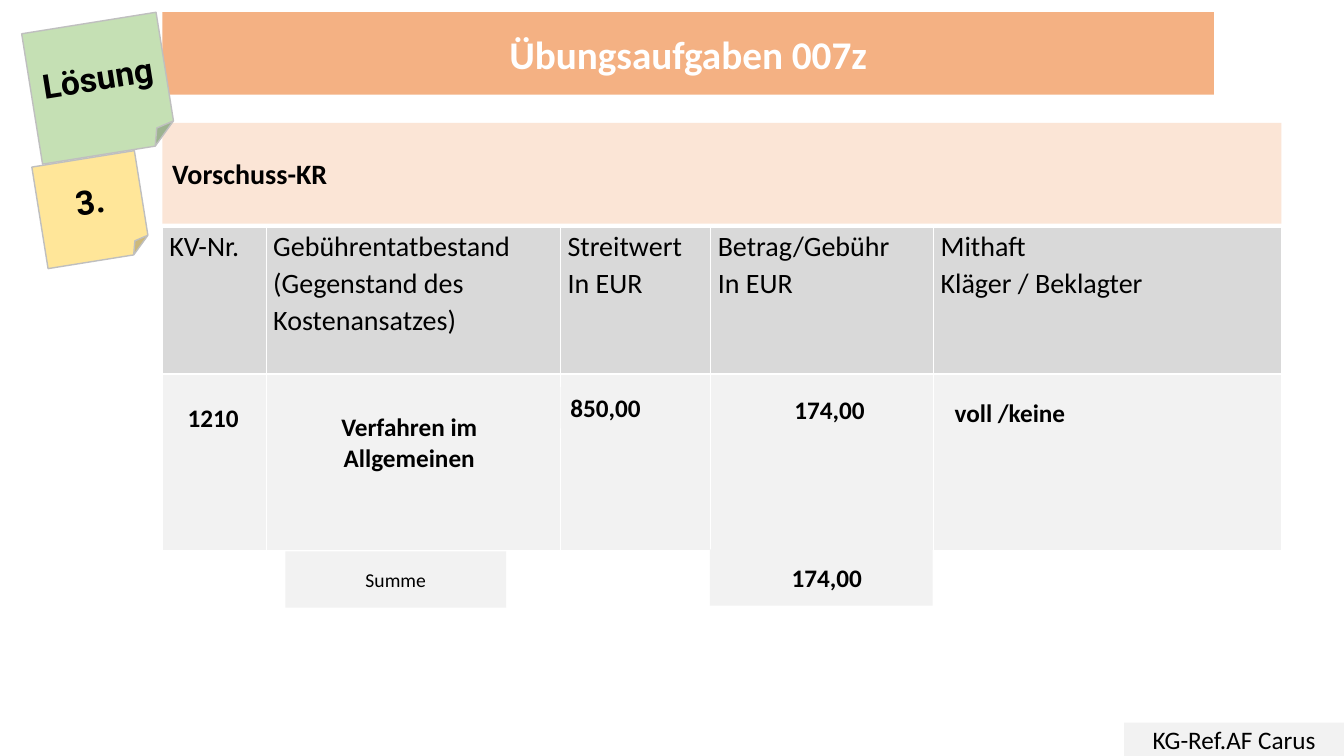
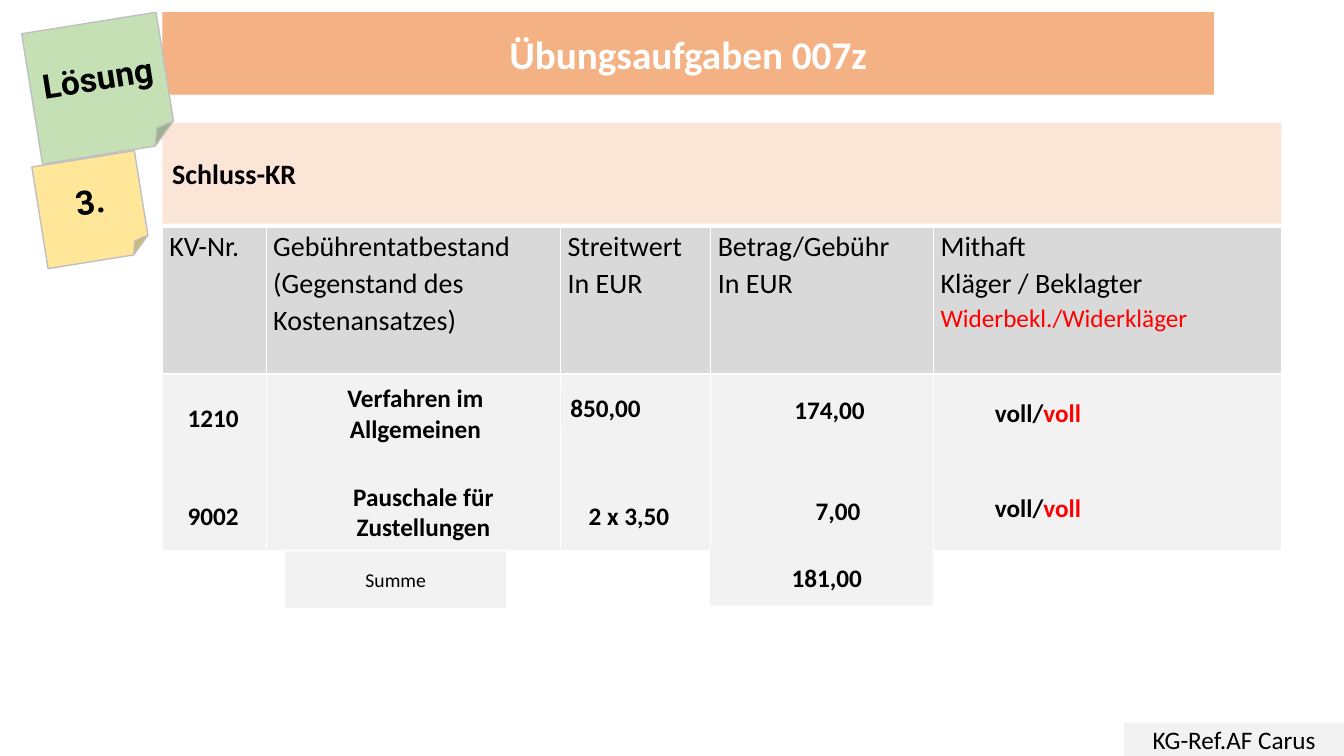
from lxml import etree
from pptx import Presentation
from pptx import util as u
from pptx.dml.color import RGBColor
from pptx.enum import shapes, text
from pptx.oxml.ns import qn

PX = 9144  # EMU per px, 100 px to the inch
COLOURS = {
    "banner": "F4B183", "heading": "FBE5D6", "header": "D9D9D9",
    "body": "F2F2F2", "green": "C5E0B4", "yellow": "FFE699",
    "edge": "BFBFBF", "white": "FFFFFF", "black": "000000", "red": "FF0000",
}
SHAPE = shapes.MSO_SHAPE
LEFT, CENTER = text.PP_ALIGN.LEFT, text.PP_ALIGN.CENTER

TABLE_LEFT, TABLE_TOP = 161, 226
COLUMNS = [103, 292, 149, 221, 345]
ROWS = [145, 175]
HEADERS = [
    ["KV-Nr."],
    ["Gebührentatbestand", "(Gegenstand des Kostenansatzes)"],
    ["Streitwert", "In EUR"],
    ["Betrag/Gebühr", "In EUR"],
    ["Mithaft", "Kläger / Beklagter"],
]


def rgb(name):
    return RGBColor.from_string(COLOURS[name])


def lengths(*pixels):
    return [u.Emu(pixel * PX) for pixel in pixels]


class Deck:
    def __init__(self):
        self.deck = Presentation()
        self.deck.slide_width, self.deck.slide_height = lengths(1333, 750)
        self.page = None

    def new_page(self):
        self.page = self.deck.slides.add_slide(self.deck.slide_layouts[5])

    def add_spans(self, para, spans, size, bold=False, font="Calibri",
                  colour="black", align=LEFT):
        """Fill a paragraph; spans is a string or a list of (text, colour)."""
        para.alignment = align
        if isinstance(spans, str):
            spans = [(spans, colour)]
        for words, span_colour in spans:
            span = para.add_run()
            span.text = words
            span.font.name = font
            span.font.size = u.Pt(size)
            span.font.bold = bold
            span.font.color.rgb = rgb(span_colour)

    def title(self, at, words):
        box = self.page.shapes.title
        box.left, box.top, box.width, box.height = lengths(*at)
        outline = etree.SubElement(box.element.spPr, qn("a:prstGeom"),
                                   prst="roundRect")
        etree.SubElement(outline, qn("a:avLst"))
        box.fill.solid()
        box.fill.fore_color.rgb = rgb("banner")
        frame = box.text_frame
        frame.auto_size = text.MSO_AUTO_SIZE.NONE
        frame.vertical_anchor = text.MSO_ANCHOR.MIDDLE
        self.add_spans(frame.paragraphs[0], words, 28, True, colour="white",
                       align=CENTER)

    def box(self, at, spans, fill="body", kind=SHAPE.RECTANGLE, size=18,
            bold=True, font="Calibri", align=LEFT):
        box = self.page.shapes.add_shape(kind, *lengths(*at))
        box.shadow.inherit = False
        box.fill.solid()
        box.fill.fore_color.rgb = rgb(fill)
        box.line.fill.background()
        box.text_frame.word_wrap = True
        box.text_frame.vertical_anchor = text.MSO_ANCHOR.MIDDLE
        self.add_spans(box.text_frame.paragraphs[0], spans, size, bold, font,
                       align=align)
        return box

    def sticky_note(self, at, words, fill):
        note = self.box(at, words, fill, SHAPE.FOLDED_CORNER, 24,
                        font="Roboto", align=CENTER)
        note.rotation = 350.9
        note.line.color.rgb = rgb("edge")
        note.line.width = u.Pt(1)

    def border(self, cell):
        properties = cell._tc.get_or_add_tcPr()
        for index, side in enumerate(("lnL", "lnR", "lnT", "lnB")):
            line = etree.Element(qn("a:" + side), w=str(u.Pt(1)))
            fill = etree.SubElement(line, qn("a:solidFill"))
            etree.SubElement(fill, qn("a:srgbClr"), val=COLOURS["white"])
            properties.insert(index, line)

    def table(self, headers):
        """Draw a header row above one empty body row."""
        at = TABLE_LEFT, TABLE_TOP, sum(COLUMNS), sum(ROWS)
        table = self.page.shapes.add_table(
            len(ROWS), len(COLUMNS), *lengths(*at)).table
        for row, height in zip(table.rows, lengths(*ROWS)):
            row.height = height
        for column, width in zip(table.columns, lengths(*COLUMNS)):
            column.width = width
        for cell in table.iter_cells():
            cell.fill.solid()
            cell.fill.fore_color.rgb = rgb("body")
            self.border(cell)
        for index, lines in enumerate(headers):
            cell = table.cell(0, index)
            cell.fill.fore_color.rgb = rgb("header")
            (cell.margin_left, cell.margin_right, cell.margin_top,
             cell.margin_bottom) = lengths(7, 7, 0, 0)
            for number, line in enumerate(lines):
                frame = cell.text_frame
                para = frame.add_paragraph() if number else frame.paragraphs[0]
                para.line_spacing = 1.07
                self.add_spans(para, line, 20 if isinstance(line, str) else 18)

    def solution(self, heading, headers, total):
        """Start a page with everything the solution pages share."""
        self.new_page()
        self.title((161, 12, 1043, 82), "Übungsaufgaben 007z")
        self.table(headers)
        self.box((161, 122, 1110, 100), heading, "heading", size=20)
        self.sticky_note((31, 22, 135, 131), "Lösung", "green")
        self.sticky_note((39, 157, 103, 102), "3.", "yellow")
        self.box((1115, 717, 218, 33), "KG-Ref.AF Carus", bold=False,
                 align=CENTER)
        self.box((283, 547, 219, 56), "Summe", size=14, bold=False,
                 align=CENTER)
        total_box = self.box((704, 545, 221, 56), total, align=CENTER)
        total_box.text_frame.margin_left = u.Emu(21 * PX)
        self.box((167, 397, 89, 35), "1210", align=CENTER)
        self.box((556, 384, 126, 41), "850,00")
        self.box((778, 377, 100, 58), "174,00")


def main():
    deck = Deck()
    procedure = "Verfahren im Allgemeinen"

    deck.solution("Vorschuss-KR", HEADERS, "174,00")
    deck.box((283, 388, 246, 101), procedure, align=CENTER)
    deck.box((937, 383, 328, 52), "voll /keine")

    counterclaim = [("Widerbekl./Widerkläger", "red")]
    deck.solution("Schluss-KR",
                  HEADERS[:-1] + [HEADERS[-1] + [counterclaim]], "181,00")
    deck.box((283, 374, 258, 71), procedure, align=CENTER)
    deck.box((167, 494, 89, 35), "9002", align=CENTER)
    deck.box((291, 472, 258, 71), "Pauschale für Zustellungen", align=CENTER)
    deck.box((574, 491, 126, 41), "2 x 3,50")
    deck.box((799, 486, 92, 41), "7,00")
    for top in (383, 477):
        deck.box((977, top, 288, 52), [("voll/", "black"), ("voll", "red")])

    deck.deck.save("out.pptx")


if __name__ == "__main__":
    main()
